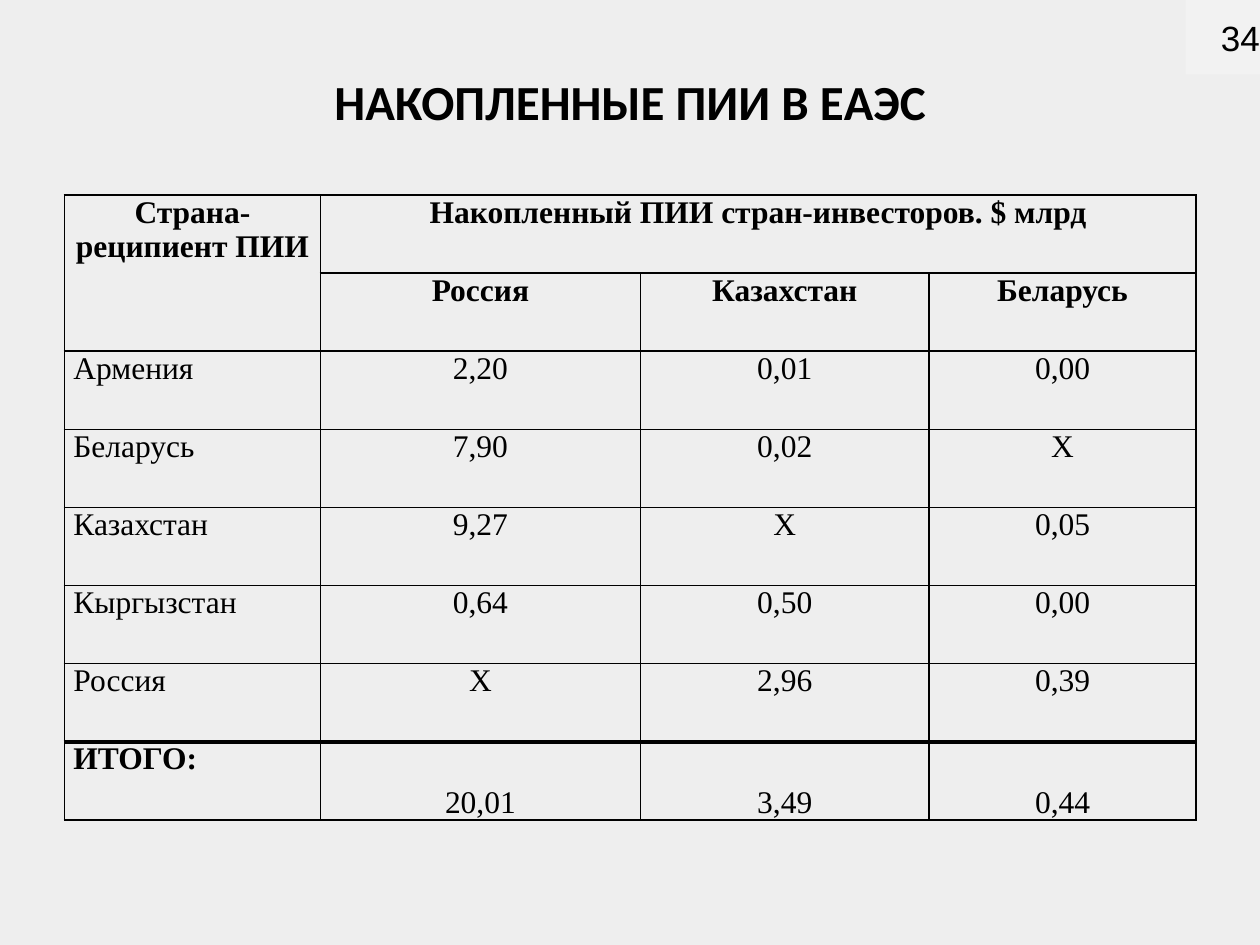
"""Build the slide with the table of accumulated FDI in the EAEU."""
from lxml import etree
from pptx import Presentation
from pptx.dml.color import RGBColor
from pptx.enum.shapes import MSO_SHAPE
from pptx.enum.text import MSO_ANCHOR, PP_ALIGN
from pptx.oxml.ns import qn
from pptx.util import Cm, Pt

RECT = MSO_SHAPE.RECTANGLE
TOP, MIDDLE, BOTTOM = MSO_ANCHOR.TOP, MSO_ANCHOR.MIDDLE, MSO_ANCHOR.BOTTOM
CENTER, RIGHT, JUSTIFY = PP_ALIGN.CENTER, PP_ALIGN.RIGHT, PP_ALIGN.JUSTIFY

BLACK = RGBColor(0x00, 0x00, 0x00)
WHITE = RGBColor(0xFF, 0xFF, 0xFF)
GREY = RGBColor(0xEE, 0xEE, 0xEE)

NUMBER_FONT = {"name": "Arial", "size": Pt(20)}
TITLE_FONT = {"name": "Calibri", "size": Pt(28), "bold": True}
BODY_FONT = {"name": "Times New Roman", "size": Pt(18), "bold": False}
HEAD_FONT = {**BODY_FONT, "bold": True}
NO_MARGINS = {f"margin_{side}": 0 for side in ("left", "top", "right", "bottom")}
CELL_MARGINS = {**NO_MARGINS, "margin_left": Cm(0.18), "margin_right": Cm(0.18)}

COL_WIDTHS = (5.16, 6.45, 5.82, 5.38)
ROW_HEIGHT = 1.575
HEAD_ROWS = 2
ROWS = (
    ("Страна-реципиент ПИИ", "Накопленный ПИИ стран-инвесторов. $ млрд", "", ""),
    ("", "Россия", "Казахстан", "Беларусь"),
    ("Армения", "2,20", "0,01", "0,00"),
    ("Беларусь", "7,90", "0,02", "Х"),
    ("Казахстан", "9,27", "Х", "0,05"),
    ("Кыргызстан", "0,64", "0,50", "0,00"),
    ("Россия", "Х", "2,96", "0,39"),
    ("ИТОГО:", "20,01", "3,49", "0,44"),
)
TOTAL = len(ROWS) - 1


def set_attrs(target, values):
    """Set each attribute named in values on the target."""
    for name, value in values.items():
        setattr(target, name, value)


def write(tf, text, font, align):
    """Write one formatted paragraph into a text frame."""
    p = tf.paragraphs[0]
    p.alignment = align
    r = p.add_run()
    r.text = text
    set_attrs(r.font, font)
    r.font.color.rgb = BLACK


def add_page_number(s, text):
    """Add the translucent square with the page number."""
    sp = s.shapes.add_shape(RECT, Cm(23.9), 0, Cm(1.5), Cm(1.5))
    sp.shadow.inherit = False
    sp.line.fill.background()
    sp.fill.solid()
    sp.fill.fore_color.rgb = WHITE
    color = sp.fill._xPr.find(f".//{qn('a:srgbClr')}")
    etree.SubElement(color, qn("a:alpha"), val="25000")
    tf = sp.text_frame
    set_attrs(tf, {**NO_MARGINS, "vertical_anchor": MIDDLE, "word_wrap": True})
    write(tf, text, NUMBER_FONT, RIGHT)


def add_title(s, text):
    """Add the centred title."""
    tf = s.shapes.add_textbox(Cm(1.27), Cm(1.32), Cm(22.86), Cm(1.8)).text_frame
    tf.word_wrap = True
    write(tf, text, TITLE_FONT, CENTER)


def set_borders(cell, widths):
    """Draw black borders of the given widths in points."""
    tcPr = cell._tc.get_or_add_tcPr()
    for side, width in widths.items():
        ln = etree.SubElement(tcPr, qn(f"a:ln{side}"), w=str(Pt(width)))
        fill = etree.SubElement(ln, qn("a:solidFill"))
        etree.SubElement(fill, qn("a:srgbClr"), val=str(BLACK))


def fill_cell(cell, text, row, col):
    """Format one cell by its place in the table and write its text."""
    set_borders(cell, {"L": 1, "R": 1,
                       "T": 2.25 if row == TOTAL else 1,
                       "B": 2.25 if row == TOTAL - 1 else 1})
    cell.fill.background()
    is_sum = row == TOTAL and col > 0
    set_attrs(cell, {**CELL_MARGINS, "vertical_anchor": BOTTOM if is_sum else TOP})
    is_head = row < HEAD_ROWS
    is_bold = is_head or (row == TOTAL and col == 0)
    if text:
        write(cell.text_frame, text, HEAD_FONT if is_bold else BODY_FONT,
              CENTER if is_head or col else JUSTIFY)


def add_fdi_table(s):
    """Add the table of accumulated investment by country."""
    table = s.shapes.add_table(
        len(ROWS), len(COL_WIDTHS), Cm(1.3), Cm(3.93),
        Cm(sum(COL_WIDTHS)), Cm(ROW_HEIGHT * len(ROWS))).table
    set_attrs(table, {"first_row": False, "horz_banding": False})
    for column, width in zip(table.columns, COL_WIDTHS):
        column.width = Cm(width)
    for row, texts in enumerate(ROWS):
        table.rows[row].height = Cm(ROW_HEIGHT)
        for col, text in enumerate(texts):
            fill_cell(table.cell(row, col), text, row, col)
    table.cell(0, 0).merge(table.cell(1, 0))
    table.cell(0, 1).merge(table.cell(0, 3))


def main():
    """Build and save the presentation."""
    prs = Presentation()
    prs.slide_width, prs.slide_height = Cm(25.4), Cm(19.05)
    s = prs.slides.add_slide(prs.slide_layouts[6])
    s.background.fill.solid()
    s.background.fill.fore_color.rgb = GREY
    add_page_number(s, "34")
    add_title(s, "НАКОПЛЕННЫЕ ПИИ В ЕАЭС")
    add_fdi_table(s)
    prs.save("out.pptx")


if __name__ == "__main__":
    main()
